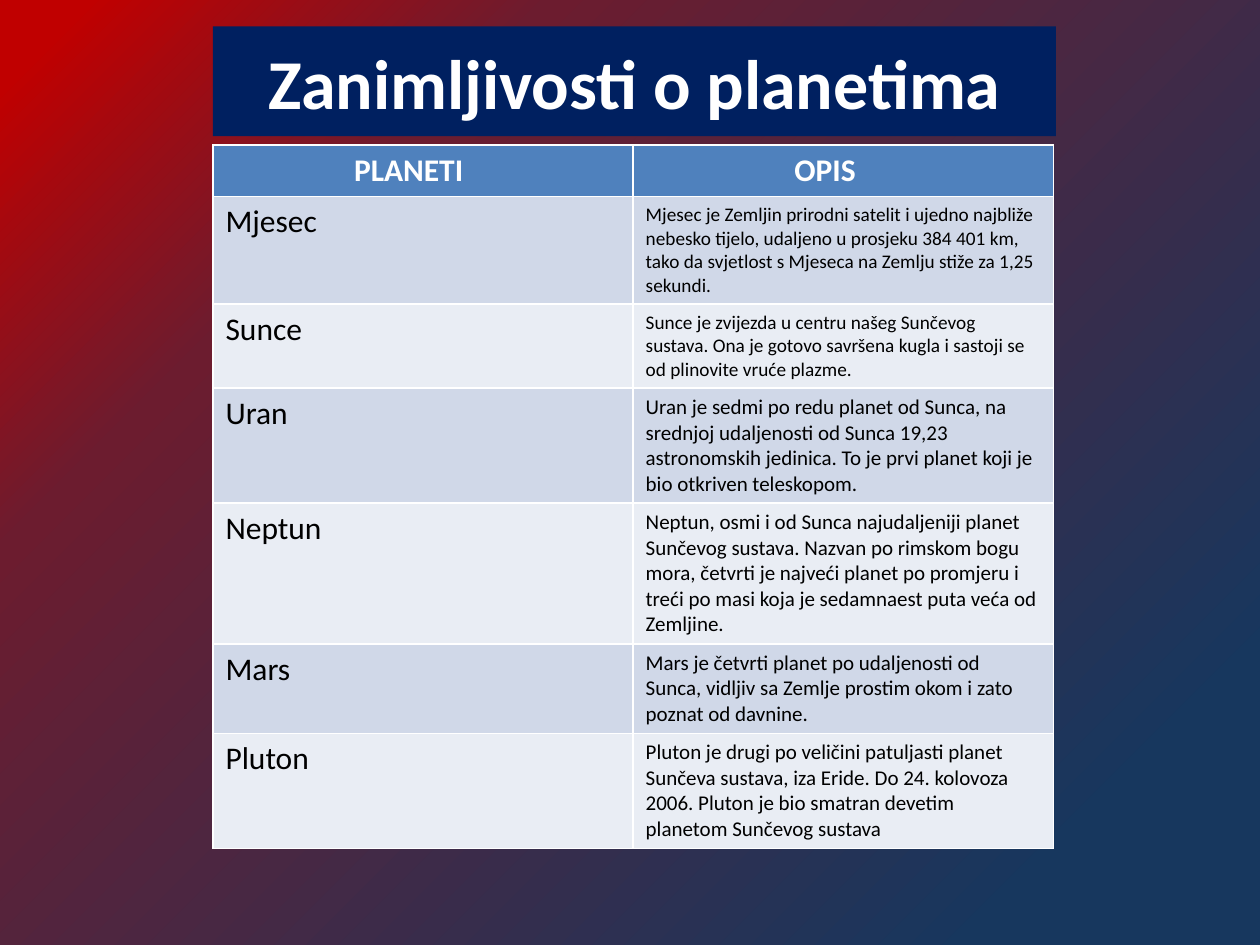
from lxml.etree import SubElement
from pptx import Presentation
from pptx.dml.color import RGBColor
from pptx.enum.text import MSO_ANCHOR, MSO_AUTO_SIZE, PP_ALIGN
from pptx.oxml.ns import qn
from pptx.util import Inches, Pt

# Content
TITLE = "Zanimljivosti o planetima"
HEADERS = [("PLANETI", 1.12), ("OPIS", 1.28)]  # text, left margin
PLANETS = [  # name, description, description size, row height
    ("Mjesec", "Mjesec je Zemljin prirodni satelit i ujedno najbliže nebesko tijelo, "
     "udaljeno u prosjeku 384 401 km, tako da svjetlost s Mjeseca na Zemlju stiže "
     "za 1,25 sekundi.", 11, 0.83),
    ("Sunce", "Sunce je zvijezda u centru našeg Sunčevog sustava. Ona je gotovo "
     "savršena kugla i sastoji se od plinovite vruće plazme.", 11, 0.65),
    ("Uran", "Uran je sedmi po redu planet od Sunca, na srednjoj udaljenosti od Sunca "
     "19,23 astronomskih jedinica. To je prvi planet koji je bio otkriven "
     "teleskopom.", 12, 0.9),
    ("Neptun", "Neptun, osmi i od Sunca najudaljeniji planet Sunčevog sustava. Nazvan "
     "po rimskom bogu mora, četvrti je najveći planet po promjeru i treći po masi "
     "koja je sedamnaest puta veća od Zemljine.", 12, 1.1),
    ("Mars", "Mars je četvrti planet po udaljenosti od Sunca, vidljiv sa Zemlje "
     "prostim okom i zato poznat od davnine.", 12, 0.7),
    ("Pluton", "Pluton je drugi po veličini patuljasti planet Sunčeva sustava, iza "
     "Eride. Do 24. kolovoza 2006. Pluton je bio smatran devetim planetom Sunčevog "
     "sustava", 12, 0.9),
]

# Style
FONT = "Calibri"
WHITE = RGBColor(0xFF, 0xFF, 0xFF)
BLACK = RGBColor(0x00, 0x00, 0x00)
NAVY = RGBColor(0x00, 0x20, 0x60)
HEADER_BLUE = RGBColor(0x4F, 0x81, 0xBD)
BANDS = [RGBColor(0xD0, 0xD8, 0xE8), RGBColor(0xE9, 0xED, 0xF4)]
BACKGROUND_STOPS = [(4, "C00000"), (25, "6C1C2F"), (87, "17375E")]
LEFT, TABLE_TOP, TABLE_WIDTH, HEADER_HEIGHT = 1.69, 1.15, 6.67, 0.41


def format_text(text_frame, size, color, bold):
    for run in text_frame.paragraphs[0].runs:
        run.font.name = FONT
        run.font.size = Pt(size)
        run.font.color.rgb = color
        run.font.bold = bold


def fill_cell(cell, text, size, color, bold, fill):
    cell.text_frame.text = text
    format_text(cell.text_frame, size, color, bold)
    cell.fill.solid()
    cell.fill.fore_color.rgb = fill


presentation = Presentation()
presentation.slide_width, presentation.slide_height = Inches(10), Inches(7.5)
slide = presentation.slides.add_slide(presentation.slide_layouts[5])

# Background gradient, running from top left to bottom right
background = slide.background.fill
background.gradient()
background.gradient_angle = 315
stop_list = slide.element.find(".//" + qn("a:gsLst"))
for stop in list(stop_list):
    stop_list.remove(stop)
for percent, color in BACKGROUND_STOPS:
    stop = SubElement(stop_list, qn("a:gs"), pos=str(percent * 1000))
    SubElement(stop, qn("a:srgbClr"), val=color)

# Title
title = slide.shapes.title
title.left, title.top = Inches(LEFT), Inches(0.21)
title.width, title.height = Inches(6.69), Inches(0.87)
title.fill.solid()
title.fill.fore_color.rgb = NAVY
title.text_frame.text = TITLE
title.text_frame.auto_size = MSO_AUTO_SIZE.NONE
title.text_frame.vertical_anchor = MSO_ANCHOR.MIDDLE
title.text_frame.paragraphs[0].alignment = PP_ALIGN.CENTER
format_text(title.text_frame, 40, WHITE, True)

# Planet table
heights = [HEADER_HEIGHT] + [planet[3] for planet in PLANETS]
table = slide.shapes.add_table(
    len(heights), len(HEADERS), Inches(LEFT), Inches(TABLE_TOP),
    Inches(TABLE_WIDTH), Inches(sum(heights))).table
for row, height in zip(table.rows, heights):
    row.height = Inches(height)
for column, (header, margin) in enumerate(HEADERS):
    cell = table.cell(0, column)
    fill_cell(cell, header, 18, WHITE, True, HEADER_BLUE)
    cell.margin_left = Inches(margin)
for row, (name, description, size, _) in enumerate(PLANETS, start=1):
    band = BANDS[(row - 1) % 2]
    fill_cell(table.cell(row, 0), name, 18, BLACK, False, band)
    fill_cell(table.cell(row, 1), description, size, BLACK, False, band)

presentation.save("out.pptx")
